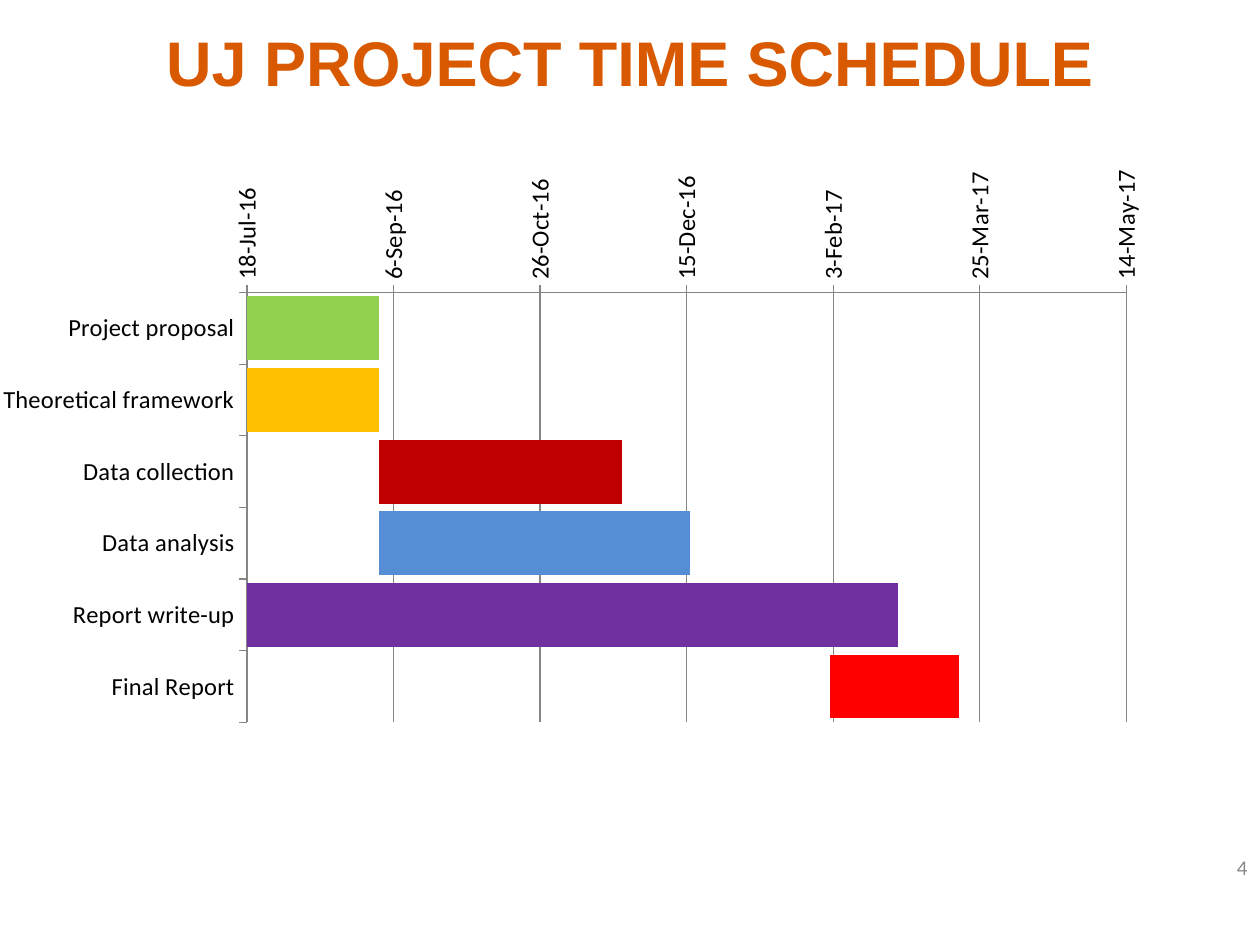
import lxml.etree
import pptx
import pptx.chart.data
import pptx.dml.color
import pptx.enum.chart
import pptx.enum.text
import pptx.oxml.ns
import pptx.util

Inches = pptx.util.Inches
Pt = pptx.util.Pt
qn = pptx.oxml.ns.qn

COLORS = {
    "title": "D95900", "text": "000000", "number": "898989", "line": "868686",
    "green": "92D050", "amber": "FFC000", "crimson": "C00000",
    "blue": "558ED5", "purple": "7030A0", "red": "FF0000",
}

# Task, start day, length in days, bar colour; days are spreadsheet serial dates
TASKS = [
    ("Project proposal", 42461, 153, "green"),
    ("Theoretical framework", 42461, 153, "amber"),
    ("Data collection", 42614, 83, "crimson"),
    ("Data analysis", 42614, 106, "blue"),
    ("Report write-up", 42461, 330, "purple"),
    ("Final Report", 42768, 44, "red"),
]
FIRST_DAY, LAST_DAY, DAY_STEP = 42569, 42869, 50
PLOT_AREA = {"x": 0.196, "y": 0.182, "w": 0.698, "h": 0.539}


def rgb(name):
    return pptx.dml.color.RGBColor.from_string(COLORS[name])


def style_font(font, name, size, color, bold=False):
    font.name = name
    font.size = Pt(size)
    font.bold = bold
    font.color.rgb = rgb(color)


def write_line(box, text, align, **style):
    frame = box.text_frame
    frame.word_wrap = True
    frame.auto_size = pptx.enum.text.MSO_AUTO_SIZE.NONE
    frame.vertical_anchor = pptx.enum.text.MSO_ANCHOR.MIDDLE
    para = frame.paragraphs[0]
    para.alignment = align
    span = para.add_run()
    span.text = text
    style_font(span.font, **style)


def add_title(page, text):
    box = page.shapes.title
    box.left, box.top = Inches(0), Inches(0)
    box.width, box.height = Inches(10), Inches(0.97)
    write_line(box, text, pptx.enum.text.PP_ALIGN.CENTER,
               name="Arial", size=36, color="title", bold=True)


def add_page_number(page, text):
    box = page.shapes.add_textbox(Inches(9.53), Inches(6.68), Inches(0.47), Inches(0.4))
    write_line(box, text, pptx.enum.text.PP_ALIGN.RIGHT,
               name="Calibri", size=12, color="number")


def place_plot_area(chart):
    """Fix the inner plot area as fractions of the chart."""
    plot_area = chart.element.find(".//" + qn("c:plotArea"))
    for old_layout in plot_area.findall(qn("c:layout")):
        plot_area.remove(old_layout)
    layout = lxml.etree.Element(qn("c:layout"))
    manual = lxml.etree.SubElement(layout, qn("c:manualLayout"))
    settings = [("layoutTarget", "inner"), ("xMode", "edge"), ("yMode", "edge")]
    for tag, value in settings + list(PLOT_AREA.items()):
        lxml.etree.SubElement(manual, qn("c:" + tag)).set("val", str(value))
    plot_area.insert(0, layout)


def style_axis(axis):
    axis.major_tick_mark = pptx.enum.chart.XL_TICK_MARK.OUTSIDE
    axis.minor_tick_mark = pptx.enum.chart.XL_TICK_MARK.NONE
    axis.format.line.color.rgb = rgb("line")
    axis.format.line.width = Pt(0.75)
    style_font(axis.tick_labels.font, "Calibri", 14, "text")


def style_date_axis(axis):
    style_axis(axis)
    axis.minimum_scale, axis.maximum_scale = FIRST_DAY, LAST_DAY
    axis.major_unit = DAY_STEP
    axis.has_major_gridlines = True
    axis.major_gridlines.format.line.color.rgb = rgb("line")
    axis.major_gridlines.format.line.width = Pt(0.75)
    axis.tick_labels.number_format = r"d\-mmm\-yy"
    axis.tick_labels.number_format_is_linked = False
    body = axis._element.find(qn("c:txPr")).find(qn("a:bodyPr"))
    body.set("rot", "-5400000")
    body.set("vert", "horz")


def add_gantt_chart(page):
    names, starts, lengths, bar_colors = zip(*TASKS)
    data = pptx.chart.data.CategoryChartData()
    data.categories = names
    data.add_series("Series 1", starts)
    data.add_series("Series 2", lengths)
    chart = page.shapes.add_chart(
        pptx.enum.chart.XL_CHART_TYPE.BAR_STACKED,
        Inches(0), Inches(1.17), Inches(10), Inches(6.33), data).chart
    chart.has_title = False
    chart.has_legend = False
    style_font(chart.font, "Calibri", 14, "text")
    place_plot_area(chart)

    style_axis(chart.category_axis)
    chart.category_axis.reverse_order = True
    style_date_axis(chart.value_axis)

    plot = chart.plots[0]
    plot.gap_width, plot.overlap = 12, 100
    plot.vary_by_categories = False
    offset, duration = plot.series
    offset.format.fill.background()
    offset.format.line.fill.background()
    duration.format.fill.solid()
    duration.format.fill.fore_color.rgb = rgb("amber")
    for index, color in enumerate(bar_colors):
        fill = duration.points[index].format.fill
        fill.solid()
        fill.fore_color.rgb = rgb(color)


def main():
    deck = pptx.Presentation()
    deck.slide_width, deck.slide_height = Inches(10), Inches(7.5)
    page = deck.slides.add_slide(deck.slide_layouts[5])
    add_title(page, "UJ PROJECT TIME SCHEDULE")
    add_page_number(page, "4")
    add_gantt_chart(page)
    deck.save("out.pptx")


if __name__ == "__main__":
    main()
